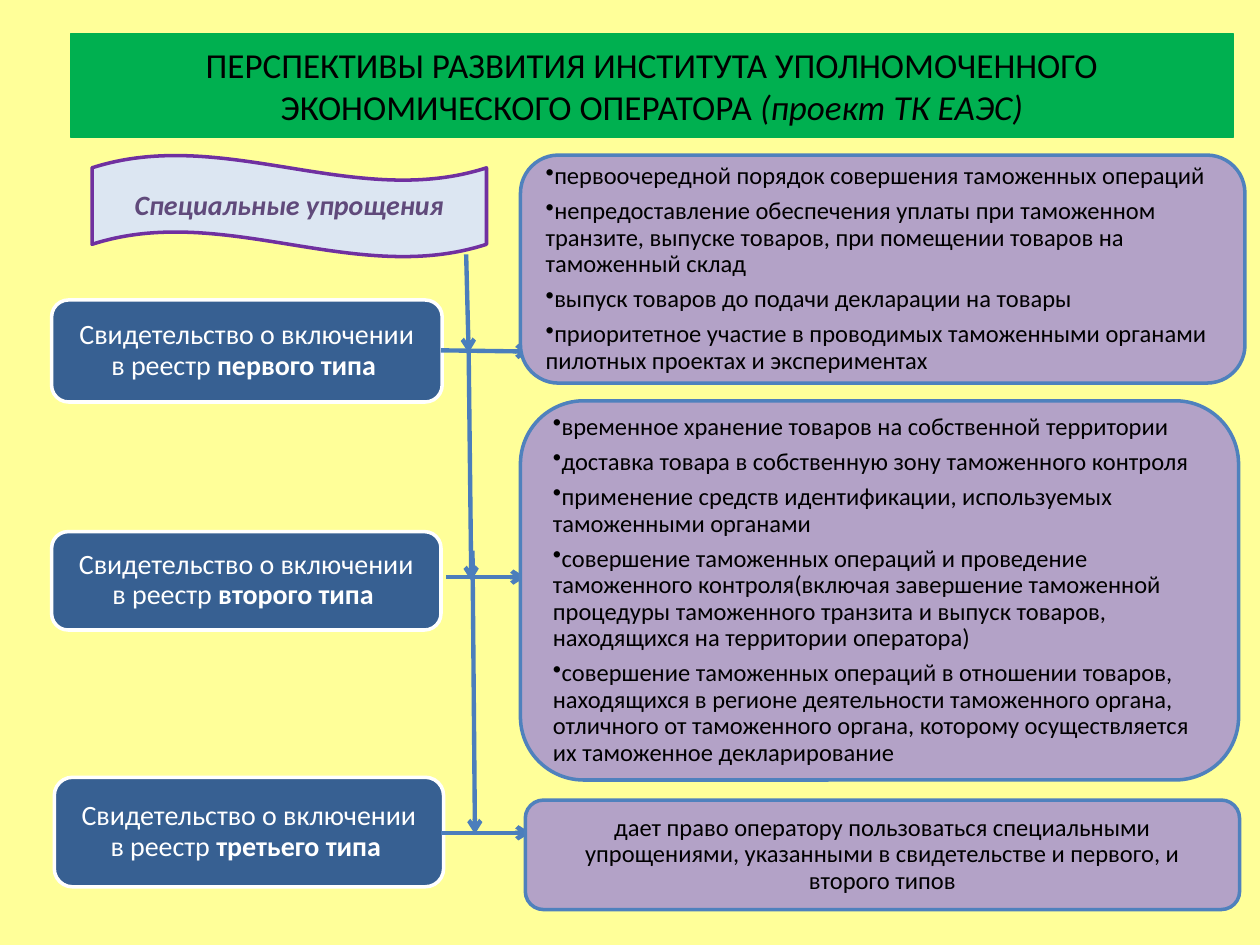
"""Build the slide on the prospects of the authorised economic operator."""
from lxml.etree import SubElement
from pptx import Presentation
from pptx.dml.color import RGBColor as RGB
from pptx.enum.shapes import MSO_CONNECTOR as LINK, MSO_SHAPE as KIND
from pptx.enum.text import MSO_ANCHOR as ANCHOR, PP_ALIGN as ALIGN
from pptx.oxml.ns import qn
from pptx.util import Pt

SAND = RGB(0xFF, 0xFF, 0x99)
NAVY = RGB(0x37, 0x60, 0x92)
WHITE = RGB(0xFF, 0xFF, 0xFF)
BLACK = RGB(0, 0, 0)
LILAC = RGB(0xB3, 0xA2, 0xC7)
BLUE = RGB(0x4F, 0x81, 0xBD)
STEEL = RGB(0x4B, 0x7E, 0xBC)
GREEN = RGB(0, 0xB0, 0x50)
PALE = RGB(0xDC, 0xE6, 0xF2)
PURPLE = RGB(0x70, 0x30, 0xA0)
PLUM = RGB(0x60, 0x4A, 0x7B)

BODY = {"line_spacing": 0.9, "space_before": Pt(0)}
SIDES = ("margin_left", "margin_top", "margin_right", "margin_bottom")

CARDS = [
    ((29.5, 171.4, 223.2, 58.3), "первого типа "),
    ((29.5, 303.8, 222.5, 56.2), "второго типа "),
    ((31, 444.2, 222.5, 62.6), "третьего типа "),
]
LINKS = [
    (252, 200.2, 303.1, 200.9),
    (254.9, 329.8, 300.2, 329.8),
    (252, 475.9, 303.1, 475.9),
]
TRUNK = [
    (266.4, 145.4, 267.8, 201.6),
    (267.8, 199.4, 269.3, 331.9),
    (270, 314.6, 271.4, 476.6),
]
PANELS = [
    ((297.4, 88.6, 414, 130.3), [
        "первоочередной порядок совершения таможенных операций",
        "непредоставление обеспечения уплаты при таможенном транзите, "
        "выпуске товаров, при помещении товаров на таможенный склад",
        "выпуск товаров до подачи декларации на товары",
        "приоритетное участие в проводимых таможенными органами "
        "пилотных проектах и экспериментах",
    ]),
    ((297.4, 229, 410.4, 216.7), [
        "временное хранение товаров на собственной территории",
        "доставка товара в собственную зону таможенного контроля",
        "применение средств идентификации, используемых таможенными органами",
        "совершение таможенных операций и проведение таможенного "
        "контроля(включая завершение таможенной процедуры таможенного "
        "транзита и выпуск товаров, находящихся на территории оператора)",
        "совершение таможенных операций в отношении товаров, находящихся "
        "в регионе деятельности таможенного органа, отличного от таможенного "
        "органа, которому осуществляется их таможенное декларирование",
    ]),
    ((300.2, 457.2, 408.2, 62.6), [
        "дает право оператору пользоваться специальными упрощениями, "
        "указанными в свидетельстве и первого, и второго типов",
    ]),
]


def apply(item, style):
    """Set every attribute that the style names."""
    for name, value in style.items():
        setattr(item, name, value)


def add_box(slide, kind, box, fill, edge, width=2, inset=8):
    """Add a filled shape and return its empty text frame."""
    shape = slide.shapes.add_shape(kind, *map(Pt, box))
    shape.shadow.inherit = False
    shape.fill.solid()
    shape.fill.fore_color.rgb = fill
    shape.line.color.rgb = edge
    shape.line.width = Pt(width)
    frame = shape.text_frame
    apply(frame, {"word_wrap": True, "vertical_anchor": ANCHOR.MIDDLE})
    apply(frame, dict.fromkeys(SIDES, Pt(inset)))
    return frame


def add_text(para, runs, size, color, style):
    """Fill a paragraph with pairs of text and font style."""
    apply(para, style)
    for text, look in runs:
        run = para.add_run()
        run.text = text
        apply(run.font, {"name": "Calibri", "size": Pt(size), **look})
        run.font.color.rgb = color


def add_dot(para):
    """Give a paragraph a round bullet with no indent."""
    props = para._p.get_or_add_pPr()
    props.set("marL", "0")
    props.set("indent", "0")
    SubElement(props, qn("a:buChar"), char="•")


def add_card(slide, box, grade):
    """Add a certificate card."""
    frame = add_box(slide, KIND.ROUNDED_RECTANGLE, box, NAVY, WHITE)
    runs = [("Свидетельство о включении в реестр ", {}), (grade, {"bold": True})]
    style = {**BODY, "alignment": ALIGN.CENTER, "space_after": Pt(5.6)}
    add_text(frame.paragraphs[0], runs, 16, WHITE, style)


def add_panel(slide, box, items):
    """Add a panel, with bullets if it has several items."""
    frame = add_box(slide, KIND.ROUNDED_RECTANGLE, box, LILAC, BLUE)
    many = len(items) > 1
    align = ALIGN.LEFT if many else ALIGN.CENTER
    style = {**BODY, "alignment": align, "space_after": Pt(4.9)}
    for i, item in enumerate(items):
        para = frame.add_paragraph() if i else frame.paragraphs[0]
        add_text(para, [(item, {})], 14, BLACK, style)
        if many:
            add_dot(para)


def add_arrow(slide, ends):
    """Add a straight line with an open arrowhead."""
    wire = slide.shapes.add_connector(LINK.STRAIGHT, *map(Pt, ends))
    wire.line.color.rgb = STEEL
    wire.line.width = Pt(2.5)
    SubElement(wire.line._get_or_add_ln(), qn("a:tailEnd"), type="arrow")
    SubElement(wire._element.spPr, qn("a:effectLst"))


def add_title(slide):
    """Add the title bar."""
    box = (40.3, 19.4, 664.6, 59)
    frame = add_box(slide, KIND.RECTANGLE, box, GREEN, GREEN, 0.75, 7.2)
    runs = [
        ("ПЕРСПЕКТИВЫ РАЗВИТИЯ ИНСТИТУТА УПОЛНОМОЧЕННОГО "
         "ЭКОНОМИЧЕСКОГО ОПЕРАТОРА ", {}),
        ("(проект ТК ЕАЭС)", {"italic": True}),
    ]
    add_text(frame.paragraphs[0], runs, 20, BLACK, {"alignment": ALIGN.CENTER})


def add_flag(slide):
    """Add the wavy heading over the cards."""
    frame = add_box(slide, KIND.WAVE, (52.6, 88.6, 225.4, 58.3), PALE, PURPLE)
    runs = [("Специальные упрощения", {"bold": True, "italic": True})]
    style = {**BODY, "alignment": ALIGN.CENTER, "space_after": Pt(5.6)}
    add_text(frame.paragraphs[0], runs, 16, PLUM, style)


def main():
    """Build and save the slide."""
    deck = Presentation()
    apply(deck, {"slide_width": Pt(720), "slide_height": Pt(540)})
    slide = deck.slides.add_slide(deck.slide_layouts[6])
    slide.background.fill.solid()
    slide.background.fill.fore_color.rgb = SAND
    for box, grade in CARDS:
        add_card(slide, box, grade)
    for ends in LINKS:
        add_arrow(slide, ends)
    for box, items in PANELS:
        add_panel(slide, box, items)
    add_title(slide)
    add_flag(slide)
    for ends in TRUNK:
        add_arrow(slide, ends)
    deck.save("out.pptx")


if __name__ == "__main__":
    main()
